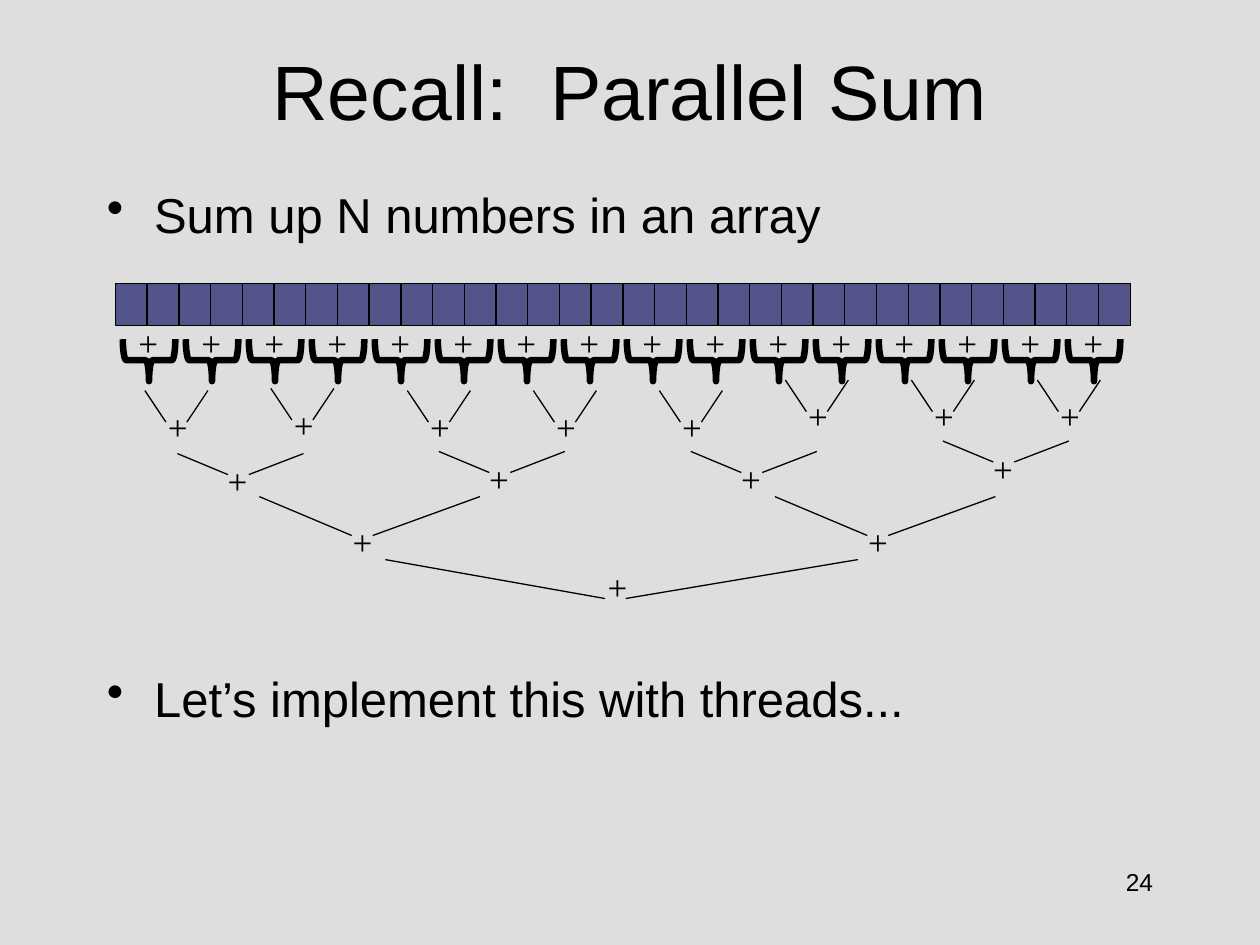
"""Build a slide showing a parallel sum as a tree of additions on a 120 by 90 grid."""
import pptx
import pptx.dml.color
import pptx.enum.shapes
import pptx.enum.text
import pptx.oxml.ns
import pptx.util
import lxml.etree

Pt = pptx.util.Pt
Kind = pptx.enum.shapes.MSO_SHAPE
Side = pptx.enum.text.PP_ALIGN
Mid = pptx.enum.text.MSO_ANCHOR
hues = {"ink": "000000", "cell": "53548A", "page": "DEDEDE"}
rgb = {name: pptx.dml.color.RGBColor.from_string(code) for name, code in hues.items()}

deck = pptx.Presentation()
deck.slide_width = pptx.util.Inches(10)
deck.slide_height = pptx.util.Inches(7.5)
unit = deck.slide_width / 120
slide = deck.slides.add_slide(deck.slide_layouts[5])
slide.background.fill.solid()
slide.background.fill.fore_color.rgb = rgb["page"]
shapes = slide.shapes


def grid(*cells):
    """Turn grid counts into lengths."""
    return [round(cell * unit) for cell in cells]


def write(box, lines, size, face="Arial", side=Side.LEFT, wrap=True, anchor=Mid.TOP):
    """Fill a box with formatted lines."""
    frame = box.text_frame
    frame.text = "\n".join(lines)
    frame.word_wrap = wrap
    frame.vertical_anchor = anchor
    for para in frame.paragraphs:
        para.alignment = side
        for key, value in {"size": Pt(size), "name": face}.items():
            setattr(para.runs[0].font, key, value)
        para.runs[0].font.color.rgb = rgb["ink"]
    return frame


title = shapes.title
for key, value in zip(("left", "top", "width", "height"), grid(9, 1, 102, 15)):
    setattr(title, key, value)
write(title, ["Recall:  Parallel Sum"], 44, side=Side.CENTER, anchor=Mid.MIDDLE)

notes = ["Sum up N numbers in an array", "Let’s implement this with threads..."]
body = write(shapes.add_textbox(*grid(9, 17, 102, 63)), notes, 28)
for para, gap in zip(body.paragraphs, (5.6, 242.6)):
    para.space_before = Pt(gap)
    props = para._p.get_or_add_pPr()
    for key, cells in {"marL": 4.5, "indent": -4.5}.items():
        props.set(key, str(grid(cells)[0]))
    mark = lxml.etree.SubElement(props, pptx.oxml.ns.qn("a:buChar"))
    mark.set("char", "•")

write(shapes.add_textbox(*grid(86, 82, 25, 6)), ["24"], 14, side=Side.RIGHT)

pitch = 3.02
for col in range(32):
    cell = shapes.add_shape(Kind.RECTANGLE, *grid(11 + col * pitch, 27, pitch, 4))
    cell.shadow.inherit = False
    cell.fill.solid()
    cell.fill.fore_color.rgb = rgb["cell"]
    cell.line.color.rgb = rgb["ink"]
    cell.line.width = Pt(0.75)

signs = []
for pair in range(16):
    brace = shapes.add_shape(Kind.LEFT_BRACE, *grid(12.2 + pair * 6, 31.8, 4, 5))
    brace.rotation = 270
    brace.shadow.inherit = False
    brace.fill.background()
    brace.line.color.rgb = rgb["ink"]
    brace.line.width = Pt(3.75)
    signs.append((12 + pair * 6, 30))

# span, run, drop, sign offset, joins
tree = [
    (6, 2, 3, (1, 0.8), [(13.8, 37.2), (25.8, 37), (38.8, 37.2), (50.8, 37.2),
                         (62.8, 37.2), (74.8, 36.2), (86.8, 36.2), (98.8, 36.2)]),
    (12, 4.8, 2, (3.6, 0), [(16.9, 43.2), (41.8, 43), (65.8, 43), (89.8, 42)]),
    (21, 8.8, 3.7, (7.7, 1.7), [(24.7, 47.3), (73.8, 47.3)]),
    (45, 20.9, 3.7, (20, 0), [(36.7, 53.3)]),
]
for span, run, drop, (right, down), joins in tree:
    for x, y in joins:
        for start, end in ((x, x + run), (x + span, x + run + 2)):
            line = shapes.add_connector(
                pptx.enum.shapes.MSO_CONNECTOR.STRAIGHT, *grid(start, y, end, y + drop))
            line.line.color.rgb = rgb["ink"]
            line.line.width = Pt(0.75)
            lxml.etree.SubElement(line._element.spPr, pptx.oxml.ns.qn("a:effectLst"))
        signs.append((x + right, y + down))

for x, y in signs:
    write(shapes.add_textbox(*grid(x, y, 4.3, 5.3)), ["+"], 20, "Times New Roman", wrap=False)

deck.save("out.pptx")
